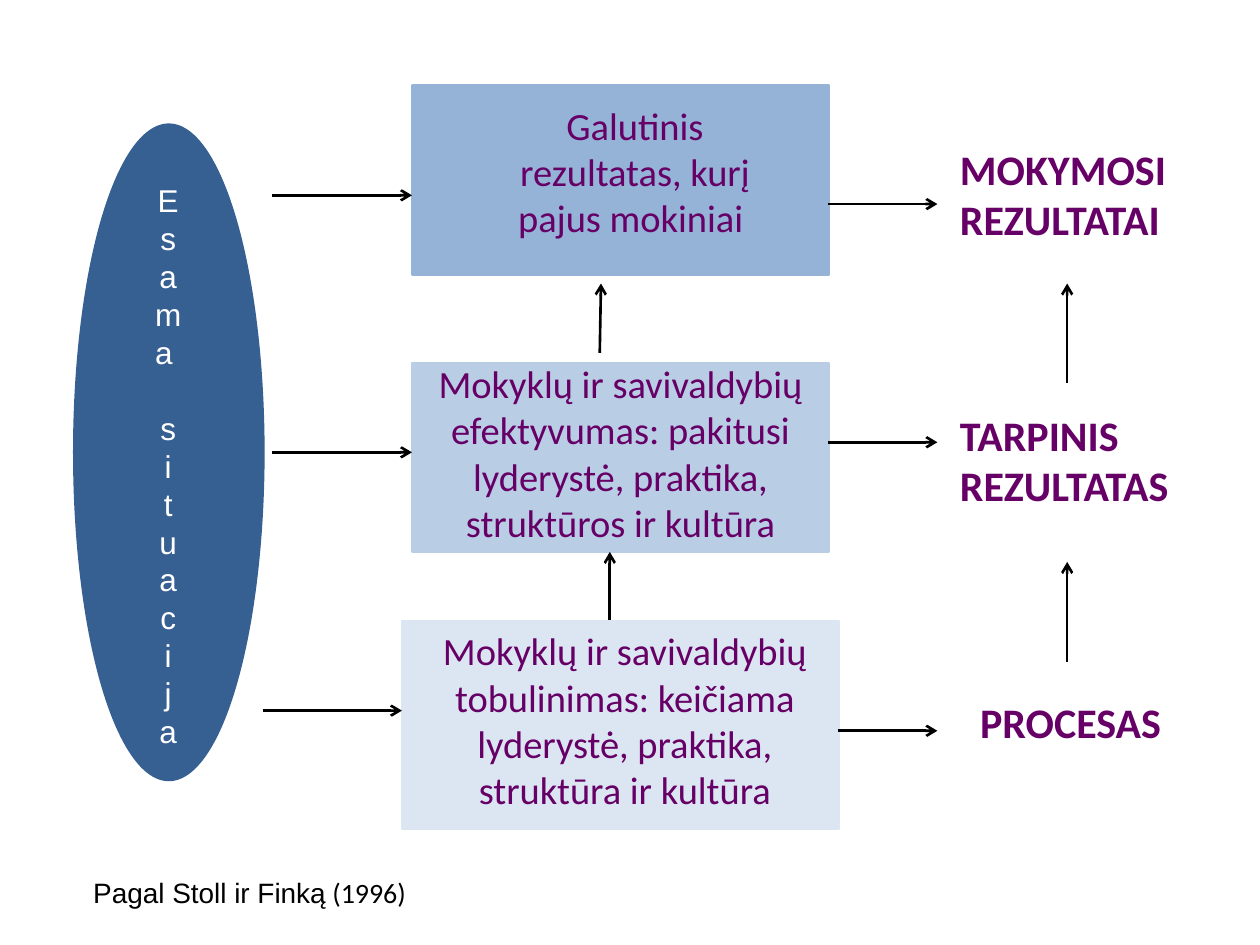
from dataclasses import dataclass

from lxml.etree import SubElement
from pptx import Presentation
from pptx.dml.color import RGBColor as Rgb
from pptx.enum.shapes import MSO_CONNECTOR as Line, MSO_SHAPE as Kind
from pptx.enum.text import MSO_AUTO_SIZE as Fit, PP_ALIGN as Align
from pptx.oxml.ns import qn
from pptx.util import Inches, Pt


@dataclass(frozen=True)
class Theme:
    oval: str = "376092"
    pale: str = "DCE6F2"
    mid: str = "B9CDE5"
    deep: str = "95B3D7"
    plum: str = "660066"
    black: str = "000000"
    white: str = "FFFFFF"
    sans: str = "Arial"
    body: str = "Calibri"
    note: float = 16
    side: float = 18
    text: float = 22
    head: float = 24
    pitch: float = 21.65
    rule: float = 1.5


@dataclass(frozen=True)
class Box:
    left: float
    top: float
    width: float
    height: float

    def area(self) -> list:
        return [Inches(n) for n in (self.left, self.top, self.width, self.height)]


@dataclass(frozen=True)
class Panel:
    kind: Kind
    box: Box
    color: str


@dataclass(frozen=True)
class Arrow:
    x1: float
    y1: float
    x2: float
    y2: float


@dataclass(frozen=True)
class Run:
    text: str
    font: str
    size: float
    color: str
    bold: bool = False


@dataclass(frozen=True)
class Label:
    box: Box
    align: Align
    runs: tuple


THEME = Theme()


def body(text: str) -> tuple:
    return (Run(text, THEME.body, THEME.text, THEME.plum),)


def head(text: str) -> tuple:
    return (Run(text, THEME.body, THEME.head, THEME.plum, True),)


PANELS = (
    Panel(Kind.OVAL, Box(0.59, 0.99, 1.5, 5.2), THEME.oval),
    Panel(Kind.RECTANGLE, Box(3.19, 4.93, 3.47, 1.65), THEME.pale),
    Panel(Kind.RECTANGLE, Box(3.27, 2.88, 3.31, 1.5), THEME.mid),
    Panel(Kind.RECTANGLE, Box(3.27, 0.68, 3.31, 1.5), THEME.deep),
)

ARROWS = (
    Arrow(2.16, 1.55, 3.27, 1.55),
    Arrow(2.16, 3.59, 3.27, 3.59),
    Arrow(2.09, 5.64, 3.19, 5.64),
    Arrow(6.57, 1.62, 7.44, 1.62),
    Arrow(6.57, 3.51, 7.44, 3.51),
    Arrow(6.65, 5.8, 7.44, 5.8),
    Arrow(4.84, 4.92, 4.84, 4.38),
    Arrow(4.76, 2.8, 4.77, 2.25),
    Arrow(8.47, 3.04, 8.47, 2.25),
    Arrow(8.47, 5.25, 8.47, 4.46),
)

LABELS = (
    Label(Box(3.82, 0.76, 2.44, 1.21), Align.CENTER,
          body("Galutinis rezultatas, kurį pajus mokiniai ")),
    Label(Box(3.19, 2.81, 3.47, 1.58), Align.CENTER,
          body("Mokyklų ir savivaldybių efektyvumas: pakitusi "
               "lyderystė, praktika, struktūros ir kultūra")),
    Label(Box(3.11, 4.93, 3.7, 1.58), Align.CENTER,
          body("Mokyklų ir savivaldybių tobulinimas: keičiama "
               "lyderystė, praktika, struktūra ir kultūra")),
    Label(Box(7.52, 1.09, 1.89, 0.91), Align.LEFT, head("MOKYMOSI REZULTATAI")),
    Label(Box(7.52, 3.2, 2.28, 0.91), Align.LEFT, head("TARPINIS REZULTATAS")),
    Label(Box(7.68, 5.48, 1.65, 0.5), Align.LEFT, head("PROCESAS")),
    Label(Box(0.35, 6.9, 2.97, 0.37), Align.RIGHT, (
        Run("Pagal Stoll ir Finką", THEME.sans, THEME.note, THEME.black),
        Run(" (1996)", THEME.body, THEME.note, THEME.black),
    )),
)

SIDE = Box(1.06, 1.39, 0.55, 4.61)
WORDS = (("E", "s", "a", "m", "a "), tuple("situacija"))


def draw_panel(slide, panel: Panel) -> None:
    shape = slide.shapes.add_shape(panel.kind, *panel.box.area())
    shape.shadow.inherit = False
    shape.fill.solid()
    shape.fill.fore_color.rgb = Rgb.from_string(panel.color)
    shape.line.color.rgb = Rgb.from_string(panel.color)
    shape.line.width = Pt(THEME.rule)


def draw_arrow(slide, arrow: Arrow) -> None:
    ends = [Inches(n) for n in (arrow.x1, arrow.y1, arrow.x2, arrow.y2)]
    link = slide.shapes.add_connector(Line.STRAIGHT, *ends)
    link.line.color.rgb = Rgb.from_string(THEME.black)
    link.line.width = Pt(THEME.rule)
    SubElement(link.line._get_or_add_ln(), qn("a:tailEnd"), type="arrow")
    SubElement(link._element.spPr, qn("a:effectLst"))


def add_frame(slide, box: Box):
    frame = slide.shapes.add_textbox(*box.area()).text_frame
    frame.word_wrap = True
    frame.auto_size = Fit.SHAPE_TO_FIT_TEXT
    return frame


def add_run(para, item: Run) -> None:
    run = para.add_run()
    run.text = item.text
    run.font.name = item.font
    run.font.size = Pt(item.size)
    run.font.bold = item.bold
    run.font.color.rgb = Rgb.from_string(item.color)


def draw_label(slide, label: Label) -> None:
    para = add_frame(slide, label.box).paragraphs[0]
    para.alignment = label.align
    for item in label.runs:
        add_run(para, item)


def draw_side(slide) -> None:
    frame = add_frame(slide, SIDE)
    for row, word in enumerate(WORDS):
        for col, mark in enumerate(word):
            first = row == 0 and col == 0
            para = frame.paragraphs[0] if first else frame.add_paragraph()
            para.alignment = Align.CENTER
            para.line_spacing = Pt(THEME.pitch)
            if row and col == 0:
                para.space_before = Pt(THEME.pitch)
            add_run(para, Run(mark, THEME.sans, THEME.side, THEME.white))


def main() -> None:
    deck = Presentation()
    deck.slide_width, deck.slide_height = Inches(10), Inches(7.5)
    slide = deck.slides.add_slide(deck.slide_layouts[6])
    for panel in PANELS:
        draw_panel(slide, panel)
    for arrow in ARROWS:
        draw_arrow(slide, arrow)
    draw_side(slide)
    for label in LABELS:
        draw_label(slide, label)
    deck.save("out.pptx")


if __name__ == "__main__":
    main()
